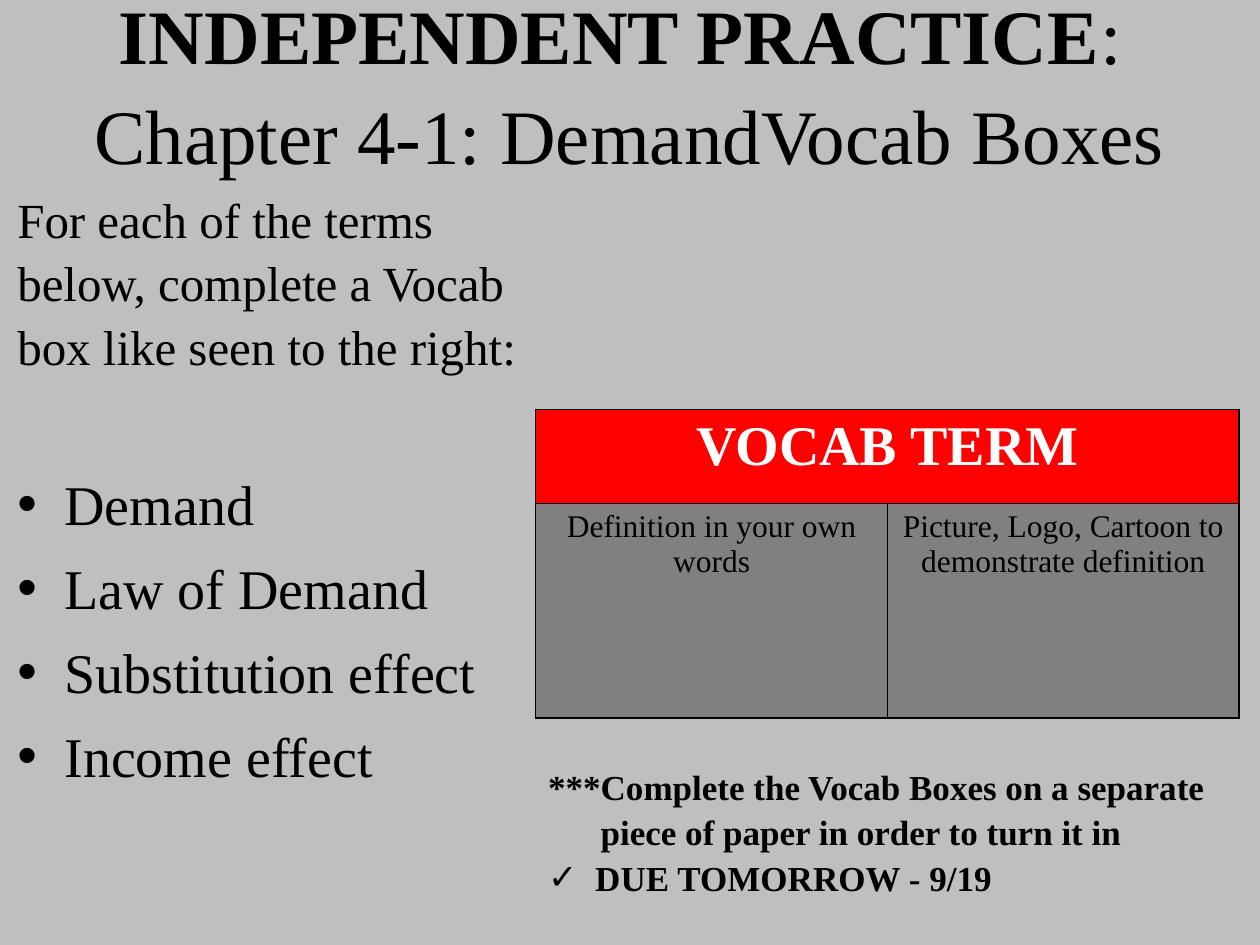
import pptx
import pptx.dml.color
import pptx.enum.text
import pptx.oxml
import pptx.oxml.ns
import pptx.util
from pptx.util import Cm, Pt

FONT = "Times New Roman"
BLACK, WHITE, RED = "000000", "FFFFFF", "FF0000"
GRAY, LIGHT_GRAY = "808080", "BFBFBF"
LINE_SPACING = 1.08
HANGING = 0.95
CENTER = pptx.enum.text.PP_ALIGN.CENTER


def color(hex_string):
    return pptx.dml.color.RGBColor.from_string(hex_string)


def format_run(run, size, bold=False, font_color=BLACK):
    run.font.name = FONT
    run.font.size = Pt(size)
    run.font.bold = bold
    run.font.color.rgb = color(font_color)


def format_paragraph(paragraph, size, bold=False, font_color=BLACK):
    for run in paragraph.runs:
        format_run(run, size, bold, font_color)


def add_text_frame(slide, left, top, width, height):
    shape = slide.shapes.add_textbox(Cm(left), Cm(top), Cm(width), Cm(height))
    shape.text_frame.word_wrap = True
    return shape.text_frame


def set_indent(paragraph, margin, first_line=0.0, bullet=None):
    properties = paragraph._p.get_or_add_pPr()
    properties.set("marL", str(Cm(margin)))
    properties.set("indent", str(Cm(first_line)))
    if bullet:
        properties.append(pptx.oxml.parse_xml(
            f'<a:buFont {pptx.oxml.ns.nsdecls("a")} typeface="Arial"/>'))
        properties.append(pptx.oxml.parse_xml(
            f'<a:buChar {pptx.oxml.ns.nsdecls("a")} char="{bullet}"/>'))


def set_borders(cell):
    properties = cell._tc.get_or_add_tcPr()
    for position, side in enumerate(("lnL", "lnR", "lnT", "lnB")):
        properties.insert(position, pptx.oxml.parse_xml(
            f'<a:{side} {pptx.oxml.ns.nsdecls("a")} w="{Pt(1)}"><a:solidFill>'
            f'<a:srgbClr val="{BLACK}"/></a:solidFill></a:{side}>'))


def add_title(slide, left, top, width, height):
    frame = add_text_frame(slide, left, top, width, height)
    frame.vertical_anchor = pptx.enum.text.MSO_ANCHOR.MIDDLE
    paragraph = frame.paragraphs[0]
    paragraph.alignment = CENTER
    paragraph.line_spacing = LINE_SPACING
    paragraph.add_run().text = "INDEPENDENT PRACTICE"
    paragraph.add_run().text = ": "
    paragraph.add_line_break()
    paragraph.add_run().text = "Chapter 4-1: DemandVocab Boxes"
    format_paragraph(paragraph, 44)
    paragraph.runs[0].font.bold = True


def add_terms(slide, left, top, width, height):
    frame = add_text_frame(slide, left, top, width, height)
    # Instruction
    instruction = frame.paragraphs[0]
    instruction.text = ("For each of the terms below, complete a Vocab box "
                        "like seen to the right:")
    instruction.line_spacing = LINE_SPACING
    format_paragraph(instruction, 28)
    # Bulleted terms, the first set well below the instruction
    terms = ("Demand", "Law of Demand", "Substitution effect", "Income effect")
    for index, term in enumerate(terms):
        paragraph = frame.add_paragraph()
        paragraph.text = term
        paragraph.line_spacing = LINE_SPACING
        paragraph.space_before = Pt(6.4 if index else 51)
        set_indent(paragraph, HANGING, -HANGING, "•")
        format_paragraph(paragraph, 32)


def add_vocab_box(slide, left, top, width, row_heights):
    table = slide.shapes.add_table(
        2, 2, Cm(left), Cm(top), Cm(width), Cm(sum(row_heights))).table
    table.first_row = table.horz_banding = False
    for column in table.columns:
        column.width = Cm(width / 2)
    for row, height in zip(table.rows, row_heights):
        row.height = Cm(height)
    table.cell(0, 0).merge(table.cell(0, 1))
    rows = (
        (("VOCAB TERM", ""), RED, 32, True, WHITE),
        (("Definition in your own words",
          "Picture, Logo, Cartoon to demonstrate definition"),
         GRAY, 18, False, BLACK),
    )
    for row, (texts, fill, size, bold, font_color) in zip(table.rows, rows):
        for cell, text in zip(row.cells, texts):
            cell.fill.solid()
            cell.fill.fore_color.rgb = color(fill)
            set_borders(cell)
            if text:
                cell.text_frame.text = text
                paragraph = cell.text_frame.paragraphs[0]
                paragraph.alignment = CENTER
                format_paragraph(paragraph, size, bold, font_color)


def add_note(slide, left, top, width, height):
    frame = add_text_frame(slide, left, top, width, height)
    frame.auto_size = pptx.enum.text.MSO_AUTO_SIZE.SHAPE_TO_FIT_TEXT
    frame.text = ("***Complete the Vocab Boxes on a separate\n"
                  "piece of paper in order to turn it in\n"
                  "DUE TOMORROW - 9/19")
    for paragraph in frame.paragraphs:
        paragraph.line_spacing = LINE_SPACING
        format_paragraph(paragraph, 20, bold=True)
    set_indent(frame.paragraphs[1], 1.06)
    set_indent(frame.paragraphs[2], HANGING, -HANGING, "✓")


def main():
    presentation = pptx.Presentation()
    presentation.slide_width, presentation.slide_height = Cm(25.4), Cm(19.05)
    slide = presentation.slides.add_slide(presentation.slide_layouts[6])
    slide.background.fill.solid()
    slide.background.fill.fore_color.rgb = color(LIGHT_GRAY)

    add_title(slide, 0, 0.03, 25.4, 3.18)
    add_terms(slide, 0.1, 3.6, 10.6, 11.43)
    add_vocab_box(slide, 10.8, 8.25, 14.18, (1.9, 4.32))
    add_note(slide, 10.8, 15.24, 14.18, 2.82)
    presentation.save("out.pptx")


if __name__ == "__main__":
    main()
